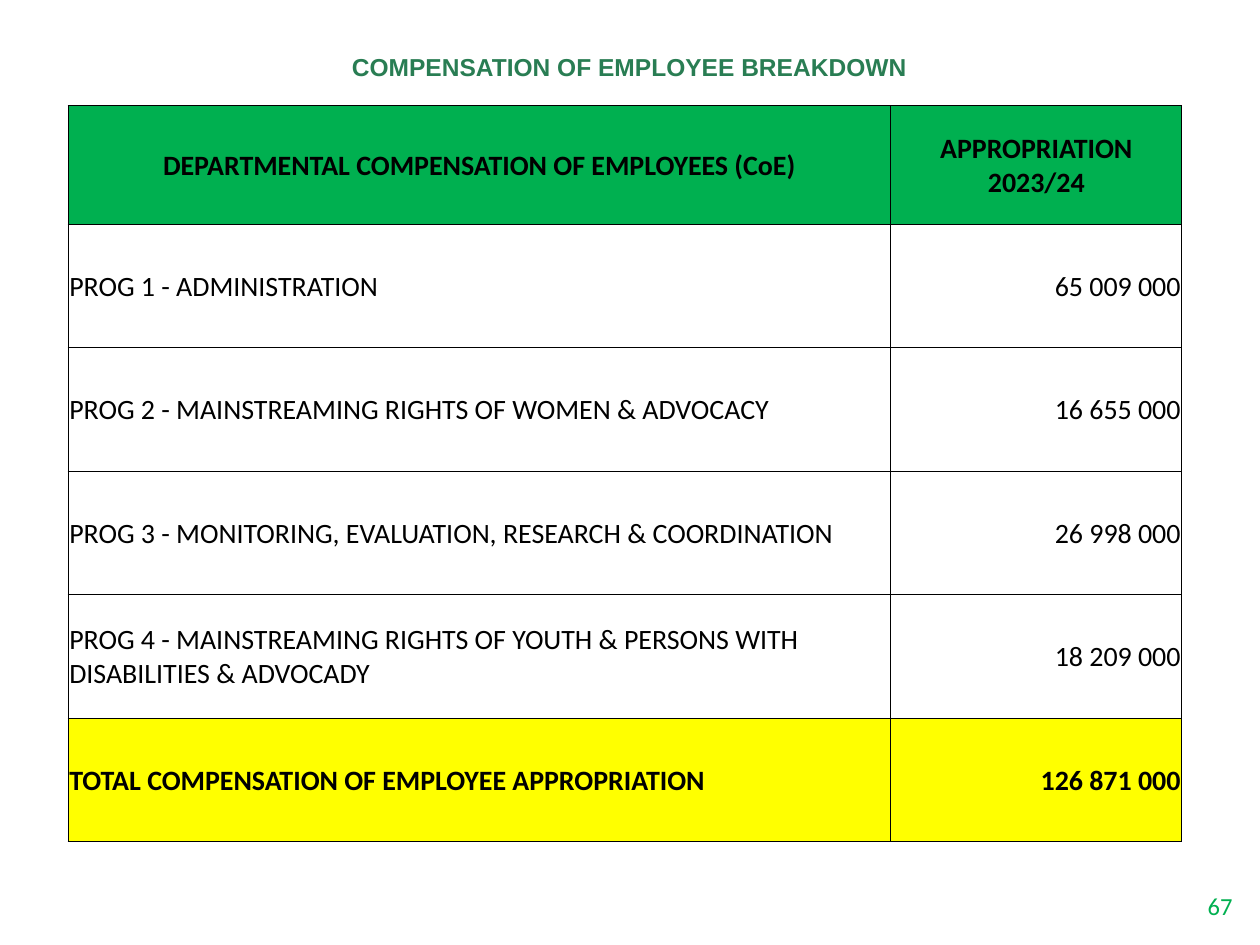
from lxml.etree import SubElement
from pptx import Presentation
from pptx.dml.color import RGBColor
from pptx.enum.text import MSO_ANCHOR as ANCHOR, PP_ALIGN as ALIGN
from pptx.oxml.ns import qn
from pptx.util import Inches, Pt

COLORS = {
    "title": "297D53",
    "green": "00B050",
    "yellow": "FFFF00",
    "black": "000000",
}
HEADER = ("DEPARTMENTAL COMPENSATION OF EMPLOYEES (CoE)", "APPROPRIATION 2023/24")
PROGRAMMES = [
    ("PROG 1 - ADMINISTRATION", "65 009 000"),
    ("PROG 2 - MAINSTREAMING RIGHTS OF WOMEN & ADVOCACY", "16 655 000"),
    ("PROG 3 - MONITORING, EVALUATION, RESEARCH & COORDINATION", "26 998 000"),
    ("PROG 4 - MAINSTREAMING RIGHTS OF YOUTH & PERSONS WITH DISABILITIES & ADVOCADY",
     "18 209 000"),
]
TOTAL = ("TOTAL COMPENSATION OF EMPLOYEE APPROPRIATION", "126 871 000")
COLUMN_WIDTHS = (6.53, 2.31)
HEADER_HEIGHT, ROW_HEIGHT = 0.94, 0.98


def write_text(tf, text, size=16, font="Calibri", color="black", bold=False,
               align=ALIGN.LEFT, spacing=None):
    """Write one formatted paragraph into a text frame."""
    tf.word_wrap = True
    p = tf.paragraphs[0]
    p.alignment = align
    if spacing:
        p.line_spacing = spacing
    r = p.add_run()
    r.text = text
    r.font.size = Pt(size)
    r.font.name = font
    r.font.bold = bold
    r.font.color.rgb = RGBColor.from_string(COLORS[color])


def add_label(s, box, text, **fmt):
    """Add a text box at the given left, top, width and height."""
    sp = s.shapes.add_textbox(*map(Inches, box))
    write_text(sp.text_frame, text, **fmt)


def set_borders(cell, color="black", width=0.5):
    """Draw a thin solid line on all four sides of a cell."""
    tc_pr = cell._tc.get_or_add_tcPr()
    for i, side in enumerate(("lnL", "lnR", "lnT", "lnB")):
        ln = tc_pr.makeelement(qn(f"a:{side}"), {"w": str(Pt(width))})
        fill = SubElement(ln, qn("a:solidFill"))
        SubElement(fill, qn("a:srgbClr"), val=COLORS[color])
        tc_pr.insert(i, ln)


def fill_cell(cell, text, fill=None, **fmt):
    """Set the text, margins, fill and borders of a cell."""
    cell.margin_left = cell.margin_right = cell.margin_top = Inches(0.01)
    cell.margin_bottom = 0
    cell.vertical_anchor = ANCHOR.MIDDLE
    if fill:
        cell.fill.solid()
        cell.fill.fore_color.rgb = RGBColor.from_string(COLORS[fill])
    else:
        cell.fill.background()
    set_borders(cell)
    write_text(cell.text_frame, text, **fmt)


def add_budget_table(s):
    """Add the table with its header, programme rows and total."""
    body_aligns = (ALIGN.LEFT, ALIGN.RIGHT)
    rows = [(HEADER, "green", True, (ALIGN.CENTER, ALIGN.CENTER))]
    rows += [(values, None, False, body_aligns) for values in PROGRAMMES]
    rows.append((TOTAL, "yellow", True, body_aligns))
    height = HEADER_HEIGHT + ROW_HEIGHT * (len(rows) - 1)
    table = s.shapes.add_table(len(rows), len(COLUMN_WIDTHS), Inches(0.54), Inches(0.84),
                               Inches(sum(COLUMN_WIDTHS)), Inches(height)).table
    table.horz_banding = False
    for column, width in zip(table.columns, COLUMN_WIDTHS):
        column.width = Inches(width)
    for i, (values, fill, bold, aligns) in enumerate(rows):
        table.rows[i].height = Inches(ROW_HEIGHT if i else HEADER_HEIGHT)
        for cell, text, align in zip(table.rows[i].cells, values, aligns):
            fill_cell(cell, text, fill, bold=bold, align=align)


def main():
    """Build the slide and save it."""
    prs = Presentation()
    prs.slide_width, prs.slide_height = Inches(10), Inches(7.5)
    s = prs.slides.add_slide(prs.slide_layouts[6])
    add_label(s, (9.24, 7.02, 0.64, 0.34), "67", size=14, color="green", align=ALIGN.RIGHT)
    add_label(s, (0.22, 0.39, 9.55, 0.68), "COMPENSATION OF EMPLOYEE BREAKDOWN", size=14,
              font="Arial", color="title", bold=True, align=ALIGN.CENTER, spacing=0.9)
    add_budget_table(s)
    prs.save("out.pptx")


if __name__ == "__main__":
    main()
